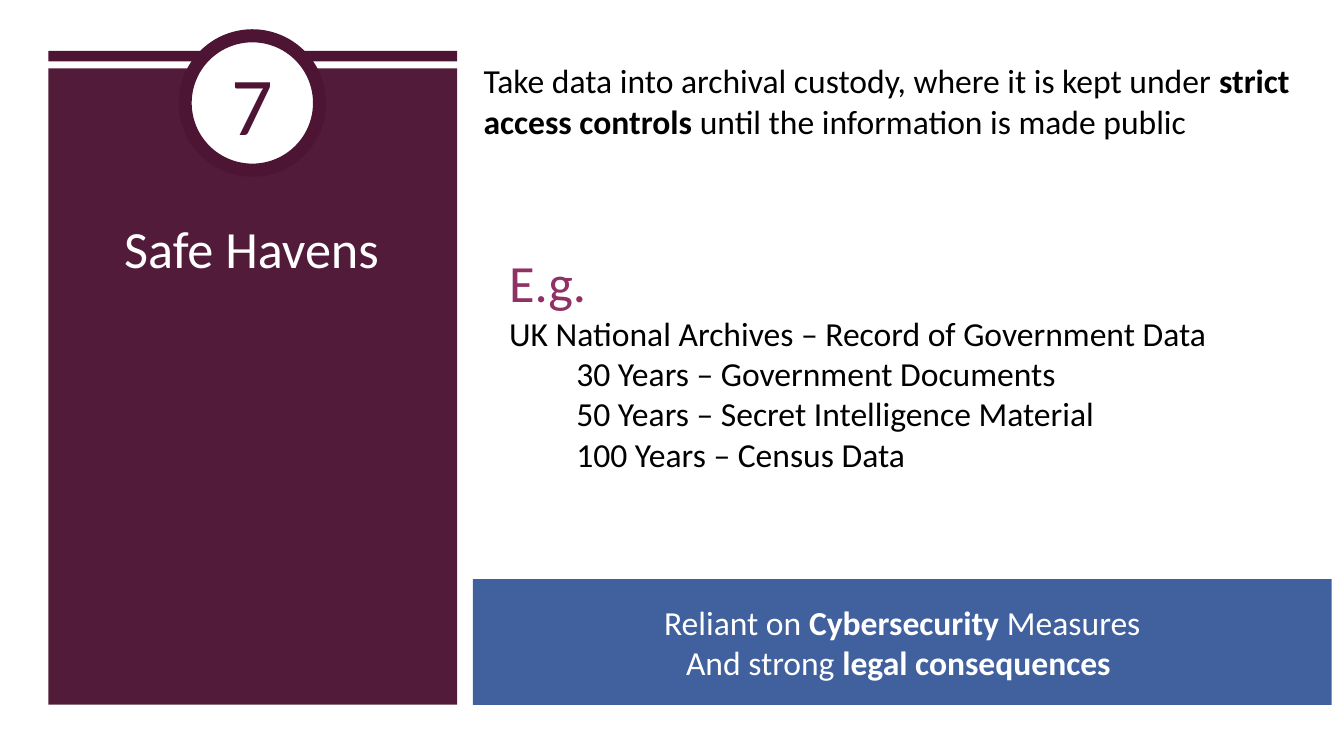
"""Build the "Safe Havens" slide: numbered side panel, example text and a banner."""
from lxml import etree
from pptx import Presentation
from pptx.dml.color import RGBColor
from pptx.enum import shapes, text
from pptx.oxml import ns
from pptx.util import Pt

COLORS = {
    "white": "FFFFFF",
    "black": "000000",
    "plum": "4D1434",
    "magenta": "903163",
    "blue": "40619D",
}
FONT = "Calibri"
RECT = shapes.MSO_SHAPE.RECTANGLE
OVAL = shapes.MSO_SHAPE.OVAL


def rgb(name):
    """Return the named colour."""
    return RGBColor.from_string(COLORS[name])


def add_block(parent, kind, box, fill, alpha=None, line=None, width=0):
    """Add a filled preset shape without shadow."""
    sp = parent.add_shape(kind, *map(Pt, box))
    sp.shadow.inherit = False
    sp.fill.solid()
    sp.fill.fore_color.rgb = rgb(fill)
    if alpha:
        color = sp.fill._xPr.find(".//" + ns.qn("a:srgbClr"))
        etree.SubElement(color, ns.qn("a:alpha"), val=str(alpha * 1000))
    if line:
        sp.line.color.rgb = rgb(line)
        sp.line.width = Pt(width)
    else:
        sp.line.fill.background()
    return sp


def add_paragraph(tf, runs, size, color, align=None, indent=0):
    """Add a paragraph made of (wording, bold) runs."""
    first = tf.paragraphs[0]
    p = tf.add_paragraph() if first.runs else first
    p.alignment = align
    p.space_before = Pt(0)
    if indent:
        p._p.get_or_add_pPr().set("marL", str(Pt(indent)))
    for wording, bold in runs:
        r = p.add_run()
        r.text = wording
        r.font.name = FONT
        r.font.size = Pt(size)
        r.font.bold = bold
        r.font.color.rgb = rgb(color)


def add_text(s, box):
    """Add a wrapping text box and return its frame."""
    tf = s.shapes.add_textbox(*map(Pt, box)).text_frame
    tf.word_wrap = True
    return tf


def set_title(s, box, wording):
    """Place the title in front of the panel and format it."""
    sp = s.shapes.title
    sp.left, sp.top, sp.width, sp.height = map(Pt, box)
    sp.element.getparent().append(sp.element)
    tf = sp.text_frame
    tf.vertical_anchor = text.MSO_ANCHOR.TOP
    add_paragraph(tf, [(wording, False)], 28, "white", text.PP_ALIGN.CENTER)


def add_panel(s):
    """Add the side panel with its bar, title and number badge."""
    group = s.shapes.add_group_shape()
    add_block(group.shapes, RECT, (26, 36.6, 219, 341), "plum", alpha=97)
    add_block(group.shapes, RECT, (26, 27.2, 219, 5.7), "plum")
    set_title(s, (41.8, 112, 185.8, 257.8), "Safe Havens")
    badge = add_block(s.shapes, OVAL, (99.2, 19.2, 72, 72), "white", line="plum", width=7)
    tf = badge.text_frame
    tf.vertical_anchor = text.MSO_ANCHOR.MIDDLE
    add_paragraph(tf, [("7", False)], 44, "plum", text.PP_ALIGN.CENTER)


def add_banner(s):
    """Add the blue banner with its two centred lines."""
    tf = add_block(s.shapes, RECT, (253.4, 310.2, 460, 67.5), "blue").text_frame
    tf.vertical_anchor = text.MSO_ANCHOR.MIDDLE
    lines = [
        [("Reliant on ", False), ("Cybersecurity", True), (" Measures", False)],
        [("And strong ", False), ("legal consequences ", True)],
    ]
    for runs in lines:
        add_paragraph(tf, runs, 18, "white", text.PP_ALIGN.CENTER)


def main():
    """Build and save the slide."""
    prs = Presentation()
    prs.slide_width, prs.slide_height = Pt(720), Pt(405)
    s = prs.slides.add_slide(prs.slide_layouts[5])
    add_block(s.shapes, RECT, (0, 0, 720, 405), "white")
    add_panel(s)

    summary = [
        ("Take data into archival custody, where it is kept under ", False),
        ("strict access controls ", True),
        ("until the information is made public", False),
    ]
    add_paragraph(add_text(s, (252, 28.8, 460, 51)), summary, 18, "black")

    tf = add_text(s, (265.7, 130.3, 428.4, 128.2))
    add_paragraph(tf, [("E.g.", False)], 28, "magenta")
    archive = "UK National Archives – Record of Government Data"
    add_paragraph(tf, [(archive, False)], 18, "black")
    periods = [
        "30 Years – Government Documents",
        "50 Years – Secret Intelligence Material",
        "100 Years – Census Data",
    ]
    for period in periods:
        add_paragraph(tf, [(period, False)], 18, "black", indent=36)

    add_banner(s)
    prs.save("out.pptx")


if __name__ == "__main__":
    main()
